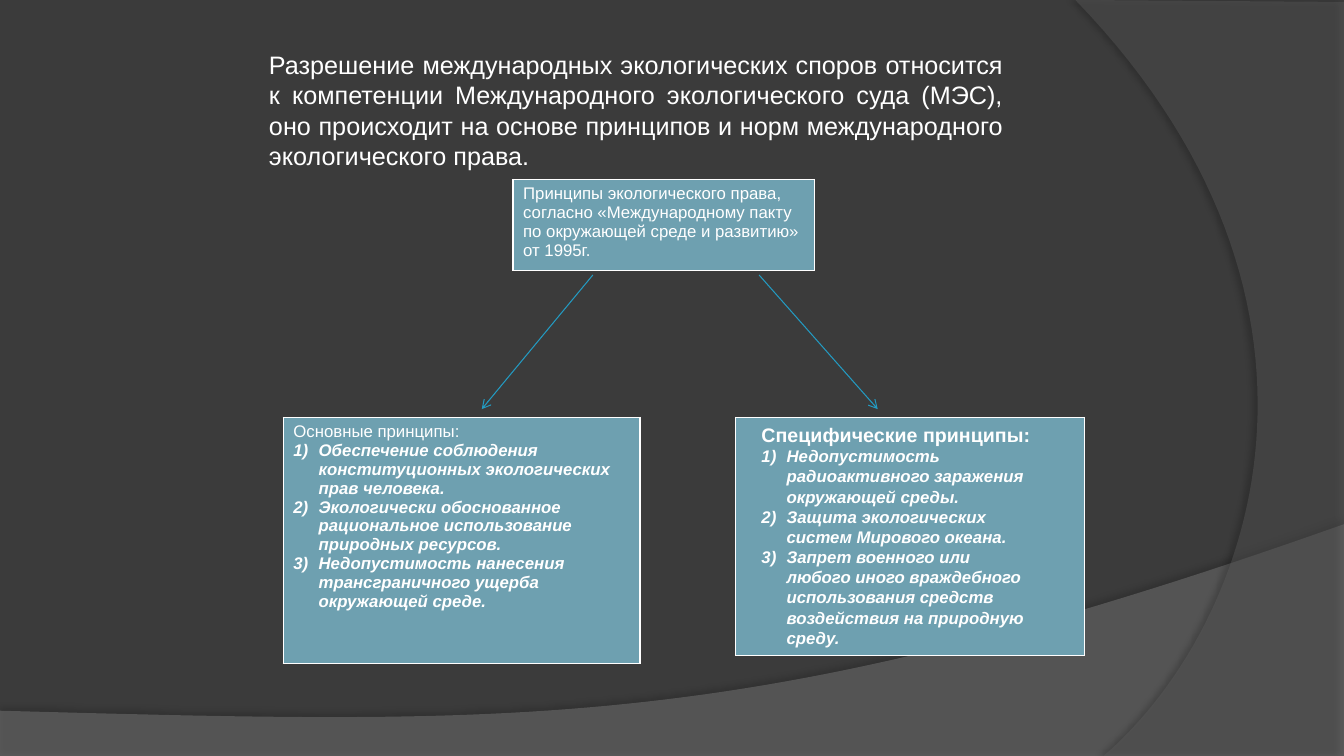
from lxml import etree
from pptx import Presentation
from pptx import util as u
from pptx.dml.color import RGBColor
from pptx.enum import shapes, text
from pptx.oxml import ns

BACKGROUND = RGBColor(0x3B, 0x3B, 0x3B)
WAVE = RGBColor(0x7F, 0x7F, 0x7F)
ARC = RGBColor(0x5E, 0x5E, 0x5E)
PANEL = RGBColor(0x6E, 0xA0, 0xB0)
ARROW = RGBColor(0x23, 0x9B, 0xC2)
WHITE = RGBColor(0xFF, 0xFF, 0xFF)
FONT = "Arial"
WIDTH, HEIGHT = 33.87, 19.05
PANEL_TOP = 10.52

INTRO = ("Разрешение международных экологических споров относится к компетенции "
         "Международного экологического суда (МЭС), оно происходит на основе "
         "принципов и норм международного экологического права.")
PACT = ("Принципы экологического права, согласно «Международному пакту по "
        "окружающей среде и развитию» от 1995г.")
MAIN_PRINCIPLES = [
    "Обеспечение соблюдения конституционных экологических прав человека.",
    "Экологически обоснованное рациональное использование природных ресурсов.",
    "Недопустимость нанесения трансграничного ущерба окружающей среде.",
]
SPECIFIC_PRINCIPLES = [
    "Недопустимость радиоактивного заражения окружающей среды.",
    "Защита экологических систем Мирового океана.",
    "Запрет военного или любого иного враждебного использования средств "
    "воздействия на природную среду.",
]


def add_element(parent, tag, **attributes):
    child = etree.SubElement(parent, ns.qn(tag))
    for name, value in attributes.items():
        child.set(name, str(value))
    return child


def write(para, words, size=12, bold=False, italic=False, numbered=False, align=None):
    if align is not None:
        para.alignment = align
    if numbered:
        properties = para._p.get_or_add_pPr()
        properties.set("marL", str(u.Cm(0.635)))
        properties.set("indent", str(-u.Cm(0.635)))
        add_element(properties, "a:buFont", typeface="+mj-lt")
        add_element(properties, "a:buAutoNum", type="arabicParenR")
    span = para.add_run()
    span.text = words
    span.font.name = FONT
    span.font.size = u.Pt(size)
    span.font.bold = bold
    span.font.italic = italic
    span.font.color.rgb = WHITE


def write_principles(frame, heading, principles, size, bold):
    write(frame.paragraphs[0], heading, size=size, bold=bold)
    for principle in principles:
        write(frame.add_paragraph(), principle, bold=True, italic=True, numbered=True)


def curve(points, steps=60):
    """Return points along a cubic curve given by its four control points."""
    result = []
    for step in range(1, steps + 1):
        t = step / steps
        weights = ((1 - t) ** 3, 3 * t * (1 - t) ** 2, 3 * t * t * (1 - t), t ** 3)
        result.append(tuple(sum(w * p[axis] for w, p in zip(weights, points))
                            for axis in (0, 1)))
    return result


def add_backdrop_shape(page, points, colour, opacity, shade, blur, distance, angle):
    points = [(u.Cm(x), u.Cm(y)) for x, y in points]
    builder = page.shapes.build_freeform(*points[0], scale=1.0)
    builder.add_line_segments(points[1:], close=True)
    shape = builder.convert_to_shape()
    shape.fill.solid()
    shape.fill.fore_color.rgb = colour
    shape.line.fill.background()
    shape.shadow.inherit = False
    properties = shape._element.spPr
    fill = properties.find(ns.qn("a:solidFill")).find(ns.qn("a:srgbClr"))
    add_element(fill, "a:alpha", val=opacity * 1000)
    shadow = add_element(properties.find(ns.qn("a:effectLst")), "a:outerShdw",
                         blurRad=u.Pt(blur), dist=u.Pt(distance),
                         dir=angle * 60000, algn="ctr", rotWithShape=0)
    black = add_element(shadow, "a:srgbClr", val="000000")
    add_element(black, "a:alpha", val=shade * 1000)


def add_backdrop(page):
    page.background.fill.solid()
    page.background.fill.fore_color.rgb = BACKGROUND
    crest = [(WIDTH, 13.21), (18.92, 18.52), (13.23, 18.26), (0, 17.91)]
    wave = [(0, 19.08), (WIDTH, 19.08), crest[0], *curve(crest)]
    add_backdrop_shape(page, wave, WAVE, 45, shade=35, blur=4, distance=3.5, angle=270)
    bow = [(27.81, HEIGHT), (31.65, 15.72), (34.47, 7.62), (27.1, 0)]
    arc = [(WIDTH, 0.05), (WIDTH, HEIGHT), bow[0], *curve(bow)]
    add_backdrop_shape(page, arc, ARC, 40, shade=45, blur=4, distance=4, angle=180)


def add_text_box(page, left, top, width, height):
    box = page.shapes.add_textbox(*map(u.Cm, (left, top, width, height)))
    box.text_frame.word_wrap = True
    return box.text_frame


def add_panel(page, left, top, width, height):
    """Add a bordered one-cell table and return the text frame of its cell."""
    frame = page.shapes.add_table(1, 1, *map(u.Cm, (left, top, width, height)))
    table = frame.table
    table.first_row = table.horz_banding = False
    cell = table.cell(0, 0)
    properties = cell._tc.get_or_add_tcPr()
    for side in ("a:lnL", "a:lnR", "a:lnT", "a:lnB"):
        border = add_element(properties, side, w=u.Pt(1))
        add_element(add_element(border, "a:solidFill"), "a:srgbClr", val=WHITE)
    cell.fill.solid()
    cell.fill.fore_color.rgb = PANEL
    return cell.text_frame


def add_arrow(page, start, end):
    arrow = page.shapes.add_connector(shapes.MSO_CONNECTOR.STRAIGHT,
                                      *map(u.Cm, (*start, *end)))
    arrow.line.color.rgb = ARROW
    arrow.line.width = u.Pt(0.75)
    add_element(arrow.line._get_or_add_ln(), "a:tailEnd", type="arrow")
    add_element(arrow._element.spPr, "a:effectLst")


def add_main_panel(page, left, top, width, height):
    frame = add_panel(page, left, top, width, height)
    write_principles(frame, "Основные принципы:", MAIN_PRINCIPLES, size=12, bold=False)


def add_specific_panel(page, left, top, width, height):
    add_panel(page, left, top, width, height)
    frame = add_text_box(page, left + 0.4, top, width - 1.4, height)
    write_principles(frame, "Специфические принципы:", SPECIFIC_PRINCIPLES,
                     size=14, bold=True)


def main():
    deck = Presentation()
    deck.slide_width, deck.slide_height = u.Cm(WIDTH), u.Cm(HEIGHT)
    page = deck.slides.add_slide(deck.slide_layouts[6])
    add_backdrop(page)
    intro = add_text_box(page, 6.53, 1.12, 19, 3.33)
    write(intro.paragraphs[0], INTRO, size=18, align=text.PP_ALIGN.JUSTIFY)
    pact = add_panel(page, 12.93, 4.52, 7.59, 2.29)
    write(pact.paragraphs[0], PACT)
    for start, end in ((19.13, 22.12), (14.94, 12.14)):
        add_arrow(page, (start, 6.93), (end, 10.31))
    add_main_panel(page, 7.14, PANEL_TOP, 8.99, 6.2)
    add_specific_panel(page, 18.54, PANEL_TOP, 8.79, 5.99)
    deck.save("out.pptx")


if __name__ == "__main__":
    main()
